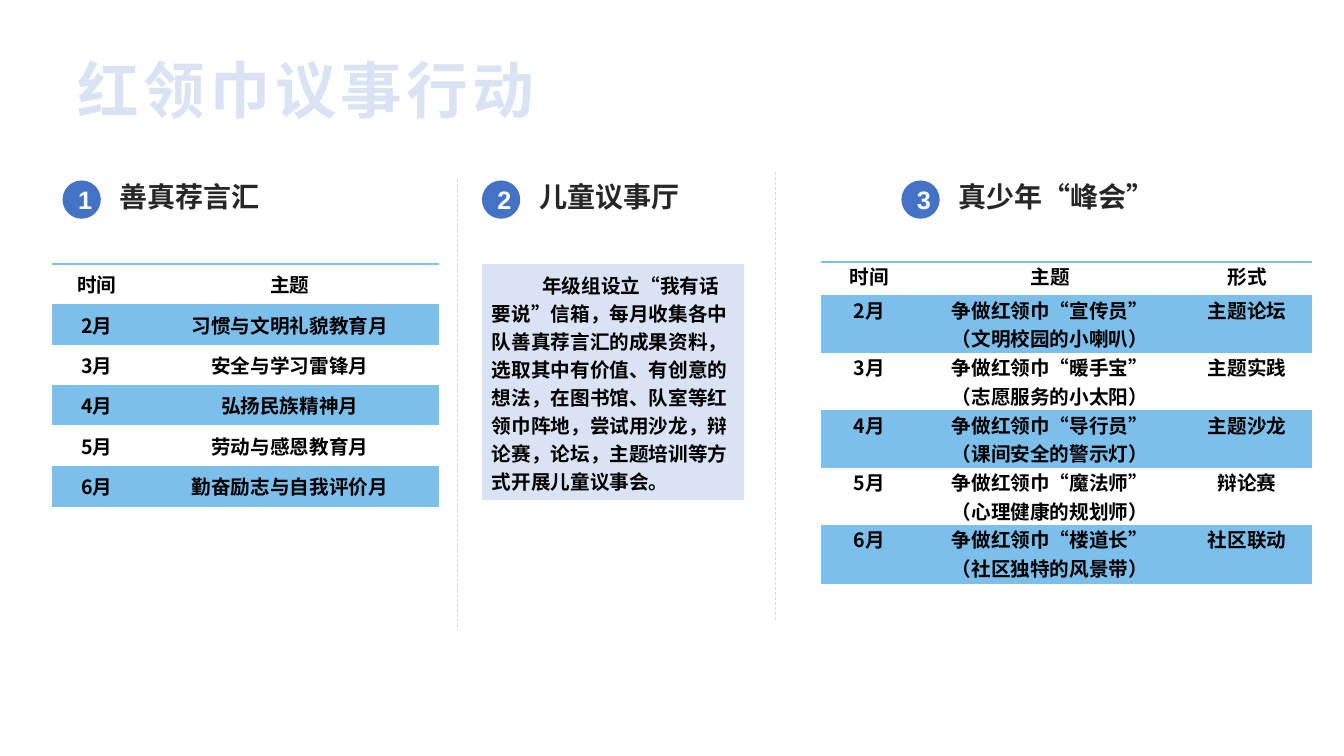
import pptx
import pptx.dml.color
import pptx.enum.dml
import pptx.enum.shapes
import pptx.enum.text
import pptx.oxml
import pptx.oxml.ns
import pptx.util

PX = 9144
ALIGN = pptx.enum.text.PP_ALIGN
ANCHOR = pptx.enum.text.MSO_ANCHOR
SHAPES = pptx.enum.shapes.MSO_SHAPE
CJK = "Noto Sans CJK SC"
NAMESPACE = pptx.oxml.ns.nsdecls("a")
NO_STYLE_NO_GRID = "{2D5ABB26-0587-4C30-8999-92F81FD0307C}"

THEME = {
    "accent": "4472C4", "pale": "DAE3F3", "band": "7BBFEA", "paper": "FFFFFF", "rule": "D9D9D9",
    "title": {"size": 44, "name": CJK, "color": "DAE3F3", "spacing": 300},
    "heading": {"size": 20, "name": "Arial", "color": "262626"},
    "number": {"size": 18, "name": "Arial", "color": "FFFFFF"},
    "body": {"size": 14, "name": CJK, "color": "000000"},
}


def apply_format(target, values):
    for attribute, value in values.items():
        setattr(target, attribute, value)


def write_text(frame, text, style, paragraph_format):
    frame.text = text
    for paragraph in frame.paragraphs:
        apply_format(paragraph, paragraph_format)
        for run in paragraph.runs:
            apply_format(run.font, {"size": pptx.util.Pt(style["size"]), "bold": True, "name": style["name"]})
            run.font.color.rgb = pptx.dml.color.RGBColor.from_string(style["color"])
            properties = run.font._element
            properties.set("spc", str(style.get("spacing", 0)))
            properties.append(pptx.oxml.parse_xml(f'<a:ea {NAMESPACE} typeface="{CJK}"/>'))


presentation = pptx.Presentation()
apply_format(presentation, {"slide_width": 1333 * PX, "slide_height": 750 * PX})
slide = presentation.slides.add_slide(presentation.slide_layouts[5])

title = slide.shapes.title
apply_format(title, {"left": 67 * PX, "top": 48 * PX, "width": 900 * PX, "height": 80 * PX})
apply_format(title.text_frame, {
    "vertical_anchor": ANCHOR.MIDDLE, "auto_size": pptx.enum.text.MSO_AUTO_SIZE.NONE,
})
write_text(title.text_frame, "红领巾议事行动", THEME["title"], {"alignment": ALIGN.LEFT})

for x, top, bottom in ((454, 178, 625), (769, 171, 617)):
    divider = slide.shapes.add_connector(
        pptx.enum.shapes.MSO_CONNECTOR.STRAIGHT, x * PX, top * PX, x * PX, bottom * PX)
    apply_format(divider.line, {
        "width": pptx.util.Pt(0.5), "dash_style": pptx.enum.dml.MSO_LINE.DASH,
    })
    divider.line.color.rgb = pptx.dml.color.RGBColor.from_string(THEME["rule"])
    divider._element.spPr.append(pptx.oxml.parse_xml(f"<a:effectLst {NAMESPACE}/>"))

headings = ((62, "善真荐言汇"), (478, "儿童议事厅"), (894, "真少年“峰会”"))
for number, (left, heading) in enumerate(headings, 1):
    badge = slide.shapes.add_shape(SHAPES.OVAL, left * PX, 179 * PX, 38 * PX, 38 * PX)
    badge.shadow.inherit = False
    badge.fill.solid()
    badge.fill.fore_color.rgb = pptx.dml.color.RGBColor.from_string(THEME["accent"])
    badge.line.fill.background()
    badge.text_frame.vertical_anchor = ANCHOR.MIDDLE
    write_text(badge.text_frame, str(number), THEME["number"], {"alignment": ALIGN.CENTER})
    label = slide.shapes.add_textbox((left + 47) * PX, 178 * PX, 320 * PX, 38 * PX)
    apply_format(label.text_frame, {"word_wrap": True, "margin_top": 0, "margin_bottom": 0})
    write_text(label.text_frame, heading, THEME["heading"], {"alignment": ALIGN.LEFT})

tables = (
    {
        "left": 52, "top": 262, "columns": (88, 295), "rows": (40,) * 6, "anchor": ANCHOR.MIDDLE,
        "cells": (
            ("时间", "主题"),
            ("2月", "习惯与文明礼貌教育月"),
            ("3月", "安全与学习雷锋月"),
            ("4月", "弘扬民族精神月"),
            ("5月", "劳动与感恩教育月"),
            ("6月", "勤奋励志与自我评价月"),
        ),
    },
    {
        "left": 814, "top": 260, "columns": (96, 263, 128), "rows": (33,) + (57,) * 5, "anchor": ANCHOR.TOP,
        "cells": (
            ("时间", "主题", "形式"),
            ("2月", "争做红领巾“宣传员”\n（文明校园的小喇叭）", "主题论坛"),
            ("3月", "争做红领巾“暖手宝”\n（志愿服务的小太阳）", "主题实践"),
            ("4月", "争做红领巾“导行员”\n（课间安全的警示灯）", "主题沙龙"),
            ("5月", "争做红领巾“魔法师”\n（心理健康的规划师）", "辩论赛"),
            ("6月", "争做红领巾“楼道长”\n（社区独特的风景带）", "社区联动"),
        ),
    },
)
for plan in tables:
    columns, rows = plan["columns"], plan["rows"]
    frame = slide.shapes.add_table(
        len(rows), len(columns), plan["left"] * PX, plan["top"] * PX, sum(columns) * PX, sum(rows) * PX)
    table = frame.table
    apply_format(table, {"first_row": False, "horz_banding": False})
    table._tbl.tblPr.find(pptx.oxml.ns.qn("a:tableStyleId")).text = NO_STYLE_NO_GRID
    for column, width in zip(table.columns, columns):
        column.width = width * PX
    for row_index, (row, height) in enumerate(zip(table.rows, rows)):
        row.height = height * PX
        edge = {0: "lnT", len(rows) - 1: "lnB"}.get(row_index)
        for cell, text in zip(row.cells, plan["cells"][row_index]):
            apply_format(cell, {
                "vertical_anchor": plan["anchor"], "margin_left": 7 * PX, "margin_right": 7 * PX,
                "margin_top": 0, "margin_bottom": 0,
            })
            write_text(cell.text_frame, text, THEME["body"], {"alignment": ALIGN.CENTER})
            cell.fill.solid()
            cell.fill.fore_color.rgb = pptx.dml.color.RGBColor.from_string(
                THEME["band" if row_index % 2 else "paper"])
            if edge:
                cell._tc.tcPr.insert(0, pptx.oxml.parse_xml(
                    f'<a:{edge} {NAMESPACE} w="{pptx.util.Pt(2.25)}"><a:solidFill>'
                    f'<a:srgbClr val="{THEME["band"]}"/></a:solidFill></a:{edge}>'))

panel = slide.shapes.add_shape(SHAPES.RECTANGLE, 478 * PX, 262 * PX, 260 * PX, 234 * PX)
panel.shadow.inherit = False
panel.fill.solid()
panel.fill.fore_color.rgb = pptx.dml.color.RGBColor.from_string(THEME["pale"])
panel.line.fill.background()
apply_format(panel.text_frame, {
    "word_wrap": True, "vertical_anchor": ANCHOR.TOP,
    "auto_size": pptx.enum.text.MSO_AUTO_SIZE.SHAPE_TO_FIT_TEXT,
})
write_text(
    panel.text_frame,
    "年级组设立“我有话要说”信箱，每月收集各中队善真荐言汇的成果资料，选取其中有价值、有创意的想法，"
    "在图书馆、队室等红领巾阵地，尝试用沙龙，辩论赛，论坛，主题培训等方式开展儿童议事会。",
    THEME["body"], {"alignment": ALIGN.LEFT, "line_spacing": pptx.util.Pt(20)})
panel.text_frame.paragraphs[0]._p.get_or_add_pPr().set("indent", str(50 * PX))

presentation.save("out.pptx")
